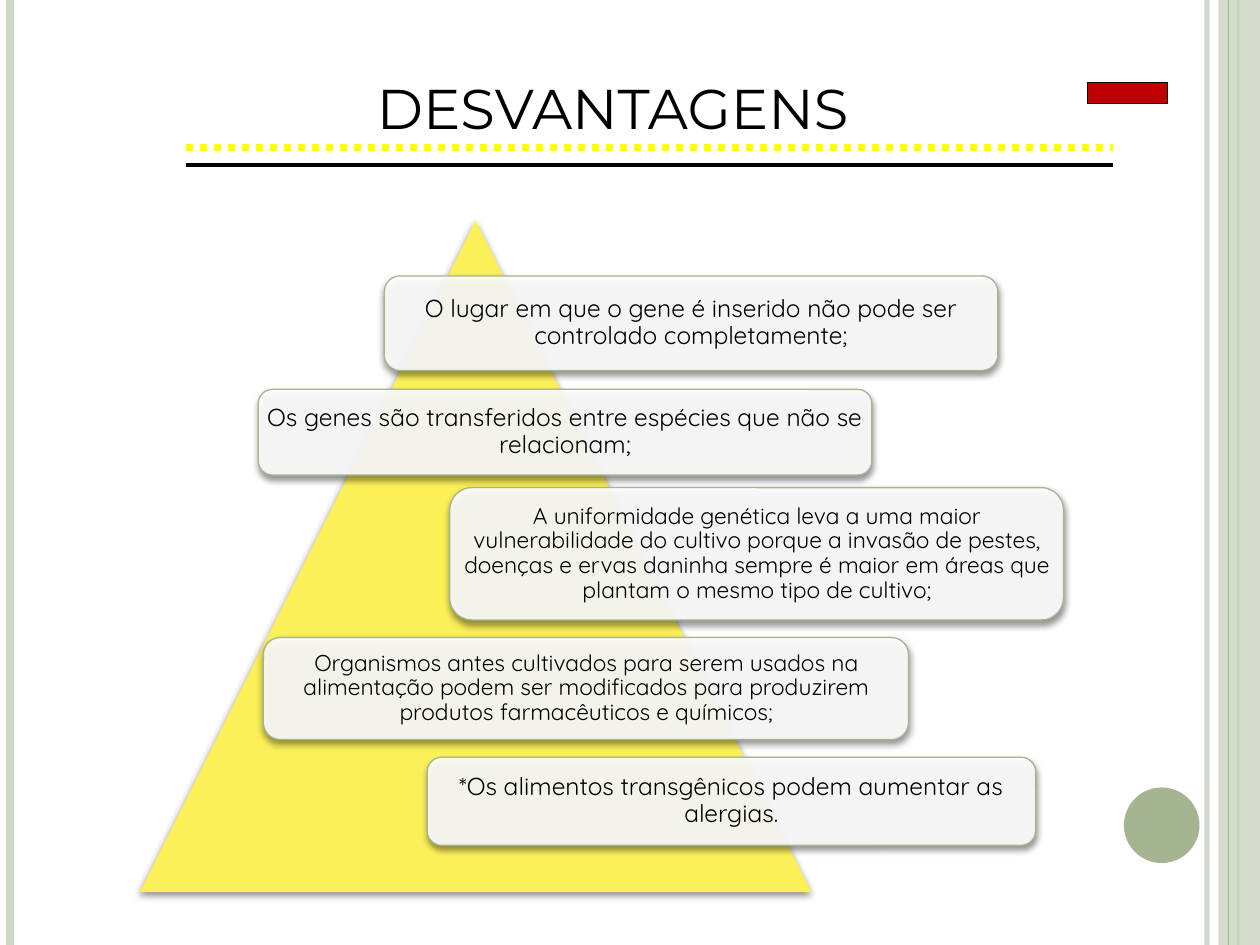
from lxml.etree import SubElement
from pptx import Presentation
from pptx.dml.color import RGBColor
from pptx.enum.dml import MSO_LINE
from pptx.enum.shapes import MSO_CONNECTOR, MSO_SHAPE
from pptx.enum.text import MSO_ANCHOR, MSO_AUTO_SIZE, PP_ALIGN
from pptx.oxml.ns import qn
from pptx.util import Inches, Pt

BLACK, WHITE, YELLOW, RED = "000000", "FFFFFF", "FFFF00", "C00000"
PALE_GREEN, GREEN, PYRAMID = "CFD7C7", "A5B592", "FCF059"
CORNER_INSET = 0.0488  # text inset of a rounded rectangle, per unit of height

# left, top, width, height, text size, margin, text
CARDS = [
    (3.05, 2.19, 4.87, 0.75, 14, 0.06,
     "O lugar em que o gene é inserido não pode ser controlado completamente;"),
    (2.05, 3.09, 4.87, 0.68, 14, 0.06,
     "Os genes são transferidos entre espécies que não se relacionam;"),
    (3.57, 3.87, 4.87, 1.05, 13, 0.05,
     "A uniformidade genética leva a uma maior vulnerabilidade do cultivo porque "
     "a invasão de pestes, doenças e ervas daninha sempre é maior em áreas que "
     "plantam o mesmo tipo de cultivo;"),
    (2.09, 5.06, 5.12, 0.81, 13, 0.05,
     "Organismos antes cultivados para serem usados na alimentação podem ser "
     "modificados para produzirem produtos farmacêuticos e químicos;"),
    (3.39, 6.01, 4.83, 0.7, 14, 0.06,
     "*Os alimentos transgênicos podem aumentar as alergias."),
]


def paint(color_format, color, alpha=100):
    color_format.rgb = RGBColor.from_string(color)


def set_alpha(fill_parent, percent):
    """Make the first solid colour under an element partly transparent."""
    clr = next(fill_parent.iter(qn("a:srgbClr")))
    SubElement(clr, qn("a:alpha"), val=str(percent * 1000))


def set_margins(tf, x, y):
    tf.margin_left = tf.margin_right = Inches(x)
    tf.margin_top = tf.margin_bottom = Inches(y)


def add_text(tf, text, size, font, align):
    p = tf.paragraphs[0]
    p.alignment = align
    r = p.add_run()
    r.text = text
    r.font.size = Pt(size)
    r.font.name = font
    paint(r.font.color, BLACK)
    return p


def add_line(slide, x1, y1, x2, y2, color, width, dash=None, alpha=None):
    line = slide.shapes.add_connector(
        MSO_CONNECTOR.STRAIGHT, Inches(x1), Inches(y1), Inches(x2), Inches(y2))
    paint(line.line.color, color)
    line.line.width = Pt(width)
    if dash:
        line.line.dash_style = dash
    spPr = line._element.spPr
    if alpha:
        set_alpha(spPr, alpha)
    SubElement(spPr, qn("a:effectLst"))


def add_shape(slide, kind, x, y, w, h, fill, line=None, alpha=None):
    sp = slide.shapes.add_shape(kind, Inches(x), Inches(y), Inches(w), Inches(h))
    sp.shadow.inherit = False
    sp.fill.solid()
    paint(sp.fill.fore_color, fill)
    if alpha:
        set_alpha(sp._element.spPr, alpha)
    if line:
        paint(sp.line.color, line)
        sp.line.width = Pt(0.75)
    else:
        sp.line.fill.background()
    return sp


def add_shadow(sp):
    effects = sp._element.spPr.find(qn("a:effectLst"))
    shadow = SubElement(effects, qn("a:outerShdw"), blurRad=str(Pt(4)),
                        dist=str(Pt(2)), dir="5400000", rotWithShape="0")
    clr = SubElement(shadow, qn("a:srgbClr"), val=BLACK)
    SubElement(clr, qn("a:alpha"), val="45000")


def add_card(slide, x, y, w, h, size, margin, text):
    sp = add_shape(slide, MSO_SHAPE.ROUNDED_RECTANGLE, x, y, w, h, WHITE, GREEN, 90)
    add_shadow(sp)
    tf = sp.text_frame
    tf.word_wrap = True
    tf.vertical_anchor = MSO_ANCHOR.MIDDLE
    inset = max(0, margin - CORNER_INSET * h)
    set_margins(tf, inset, inset)
    p = add_text(tf, text, size, "Quicksand", PP_ALIGN.CENTER)
    p.line_spacing = 0.9


def add_title(slide, text):
    title = slide.shapes.title
    title.left, title.top = Inches(2.89), Inches(0.53)
    title.width, title.height = Inches(4.84), Inches(0.64)
    tf = title.text_frame
    tf.word_wrap = True
    tf.auto_size = MSO_AUTO_SIZE.NONE
    tf.vertical_anchor = MSO_ANCHOR.TOP
    set_margins(tf, 0.1, 0.05)
    add_text(tf, text, 32, "Montserrat", PP_ALIGN.LEFT)


def add_side_decoration(slide, height):
    add_line(slide, 9.58, 0, 9.58, height, PALE_GREEN, 3, alpha=93)
    add_line(slide, 0.08, 0, 0.08, height, PALE_GREEN, 4.5)
    add_line(slide, 9.83, 0, 9.83, height, GREEN, 1.5)
    add_shape(slide, MSO_SHAPE.RECTANGLE, 9.67, 0, 0.33, height, PALE_GREEN, alpha=87)
    add_line(slide, 9.75, 0, 9.75, height, GREEN, 0.75)
    add_shape(slide, MSO_SHAPE.OVAL, 8.92, 6.25, 0.6, 0.6, GREEN)


def main():
    prs = Presentation()
    prs.slide_width, prs.slide_height = Inches(10), Inches(7.5)
    slide = prs.slides.add_slide(prs.slide_layouts[5])

    add_side_decoration(slide, 7.5)
    add_line(slide, 1.48, 1.17, 8.83, 1.17, YELLOW, 4, MSO_LINE.ROUND_DOT)
    add_line(slide, 1.48, 1.31, 8.83, 1.31, BLACK, 2.5)
    add_title(slide, "DESVANTAGENS")
    add_shape(slide, MSO_SHAPE.MATH_MINUS, 8.52, 0.39, 0.86, 0.7, RED, BLACK)

    pyramid = add_shape(slide, MSO_SHAPE.ISOSCELES_TRIANGLE,
                        1.11, 1.75, 5.33, 5.33, PYRAMID)
    add_shadow(pyramid)
    for card in CARDS:
        add_card(slide, *card)

    prs.save("out.pptx")


if __name__ == "__main__":
    main()
